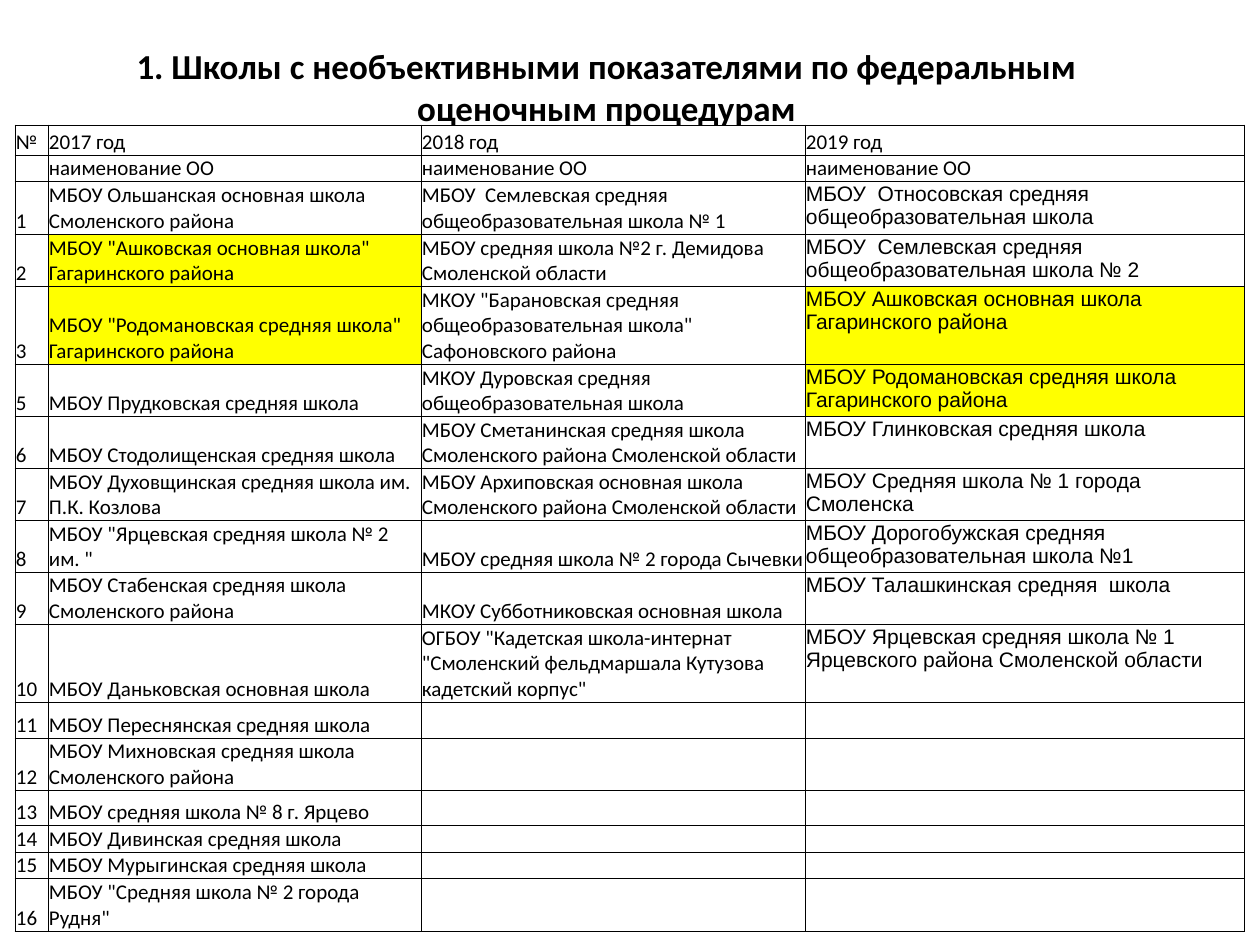
import pptx
import pptx.util
import pptx.dml.color
import pptx.enum.text
import lxml.etree

PX = 914400 // 126
COLORS = {"text": "000000", "border": "000000", "plain": "FFFFFF", "marked": "FFFF00"}
ANCHOR = pptx.enum.text.MSO_ANCHOR
ALIGN = pptx.enum.text.PP_ALIGN


def write(tf, text, size=12, font="Calibri", bold=False, align=ALIGN.LEFT):
    p = tf.paragraphs[0]
    p.alignment = align
    if not text:
        p._p.get_or_add_endParaRPr().set("sz", str(size * 100))
        return
    r = p.add_run()
    r.text = text
    r.font.size = pptx.util.Pt(size)
    r.font.name = font
    r.font.bold = bold
    r.font.color.rgb = pptx.dml.color.RGBColor.from_string(COLORS["text"])


def add_borders(cell):
    ns = "http://schemas.openxmlformats.org/drawingml/2006/main"
    tc_pr = cell._tc.get_or_add_tcPr()
    for side in ("lnL", "lnR", "lnT", "lnB"):
        ln = lxml.etree.SubElement(tc_pr, f"{{{ns}}}{side}", w="6350")
        fill = lxml.etree.SubElement(ln, f"{{{ns}}}solidFill")
        lxml.etree.SubElement(fill, f"{{{ns}}}srgbClr", val=COLORS["border"])


rows = [
    (30, "№", "2017 год", "2018 год", "2019 год"),
    (26, "", "наименование ОО", "наименование ОО", "наименование ОО"),
    (53, "1", "МБОУ Ольшанская основная школа Смоленского района",
     "МБОУ  Семлевская средняя общеобразовательная школа № 1",
     "МБОУ  Относовская средняя общеобразовательная школа"),
    (52, "2", 'МБОУ "Ашковская основная школа" Гагаринского района',
     "МБОУ средняя школа №2 г. Демидова Смоленской области",
     "МБОУ  Семлевская средняя общеобразовательная школа № 2"),
    (78, "3", 'МБОУ "Родомановская средняя школа" Гагаринского района',
     'МКОУ "Барановская средняя общеобразовательная школа" Сафоновского района',
     "МБОУ Ашковская основная школа Гагаринского района"),
    (52, "5", "МБОУ Прудковская средняя школа",
     "МКОУ Дуровская средняя общеобразовательная школа",
     "МБОУ Родомановская средняя школа Гагаринского района"),
    (52, "6", "МБОУ Стодолищенская средняя школа",
     "МБОУ Сметанинская средняя школа Смоленского района Смоленской области",
     "МБОУ Глинковская средняя школа"),
    (52, "7", "МБОУ Духовщинская средняя школа им. П.К. Козлова",
     "МБОУ Архиповская основная школа Смоленского района Смоленской области",
     "МБОУ Средняя школа № 1 города Смоленска"),
    (52, "8", 'МБОУ "Ярцевская средняя школа № 2 им. "',
     "МБОУ средняя школа № 2 города Сычевки",
     "МБОУ Дорогобужская средняя общеобразовательная школа №1"),
    (52, "9", "МБОУ Стабенская средняя школа Смоленского района",
     "МКОУ Субботниковская основная школа",
     "МБОУ Талашкинская средняя  школа"),
    (78, "10", "МБОУ Даньковская основная школа",
     'ОГБОУ "Кадетская школа-интернат "Смоленский фельдмаршала Кутузова кадетский корпус"',
     "МБОУ Ярцевская средняя школа № 1 Ярцевского района Смоленской области"),
    (36, "11", "МБОУ Переснянская средняя школа", "", ""),
    (52, "12", "МБОУ Михновская средняя школа Смоленского района", "", ""),
    (35, "13", "МБОУ средняя школа № 8 г. Ярцево", "", ""),
    (27, "14", "МБОУ Дивинская средняя школа", "", ""),
    (26, "15", "МБОУ Мурыгинская средняя школа", "", ""),
    (53, "16", 'МБОУ "Средняя школа № 2 города Рудня"', "", ""),
]
widths = [33, 373, 384, 440]
marked = {(3, 1), (4, 1), (4, 3), (5, 3)}

prs = pptx.Presentation()
prs.slide_width = 1260 * PX
prs.slide_height = 945 * PX
s = prs.slides.add_slide(prs.slide_layouts[6])

tf = s.shapes.add_textbox(74 * PX, 27 * PX, 1065 * PX, 118 * PX).text_frame
tf.word_wrap = True
tf.vertical_anchor = ANCHOR.MIDDLE
write(tf, "1. Школы с необъективными показателями по федеральным оценочным процедурам",
      size=20, bold=True, align=ALIGN.CENTER)

height = sum(row[0] for row in rows)
table = s.shapes.add_table(len(rows), len(widths), 15 * PX, 125 * PX,
                           sum(widths) * PX, height * PX).table
table.first_row = False
table.horz_banding = False
for col, width in zip(table.columns, widths):
    col.width = width * PX

for i, (row_height, *texts) in enumerate(rows):
    table.rows[i].height = row_height * PX
    for j, text in enumerate(texts):
        cell = table.cell(i, j)
        school_2019 = j == 3 and i >= 2
        cell.margin_left = cell.margin_right = cell.margin_top = PX
        cell.margin_bottom = 0
        cell.vertical_anchor = ANCHOR.TOP if school_2019 else ANCHOR.BOTTOM
        add_borders(cell)
        cell.fill.solid()
        color = COLORS["marked" if (i, j) in marked else "plain"]
        cell.fill.fore_color.rgb = pptx.dml.color.RGBColor.from_string(color)
        write(cell.text_frame, text, font="Arial" if school_2019 else "Calibri")

prs.save("out.pptx")
